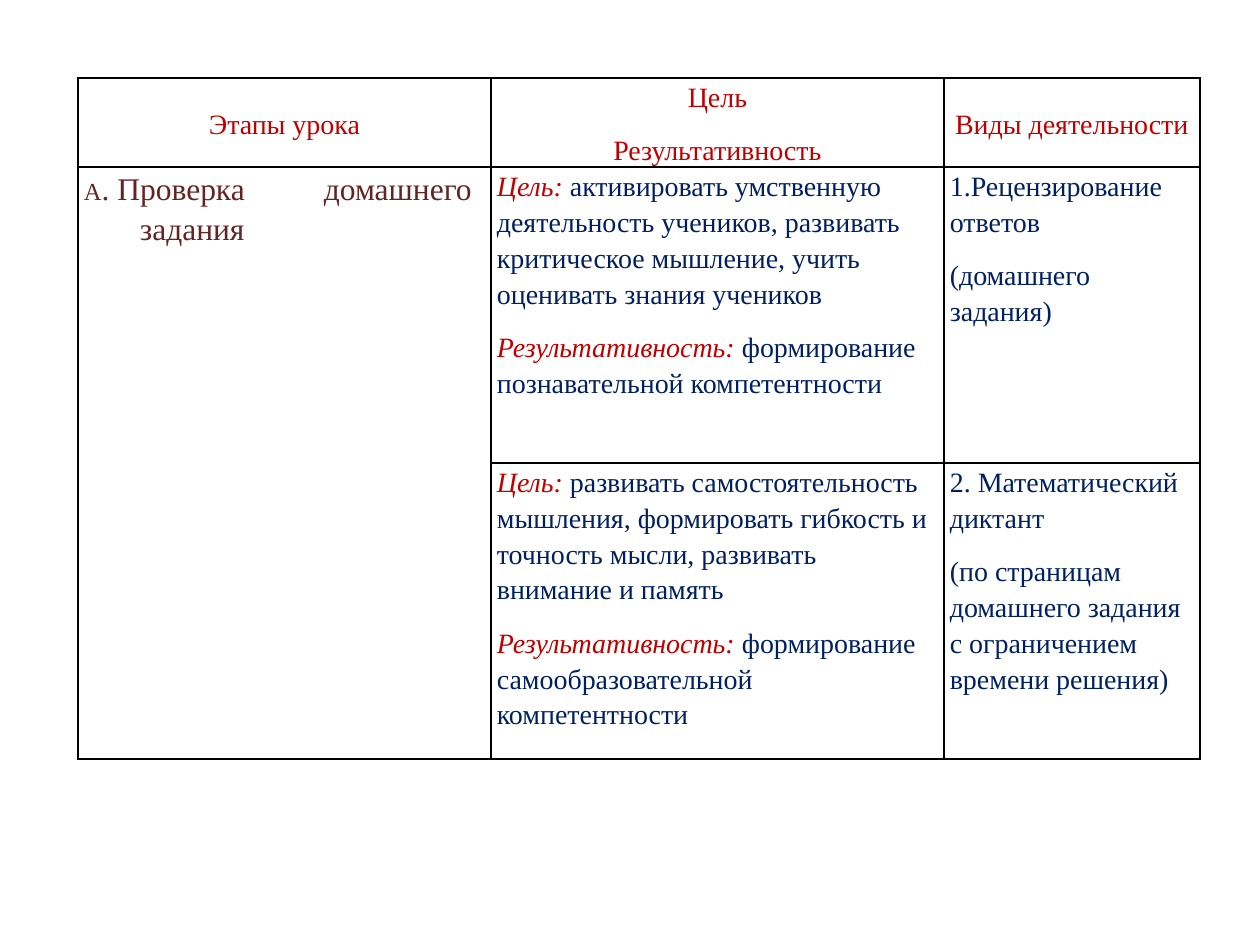
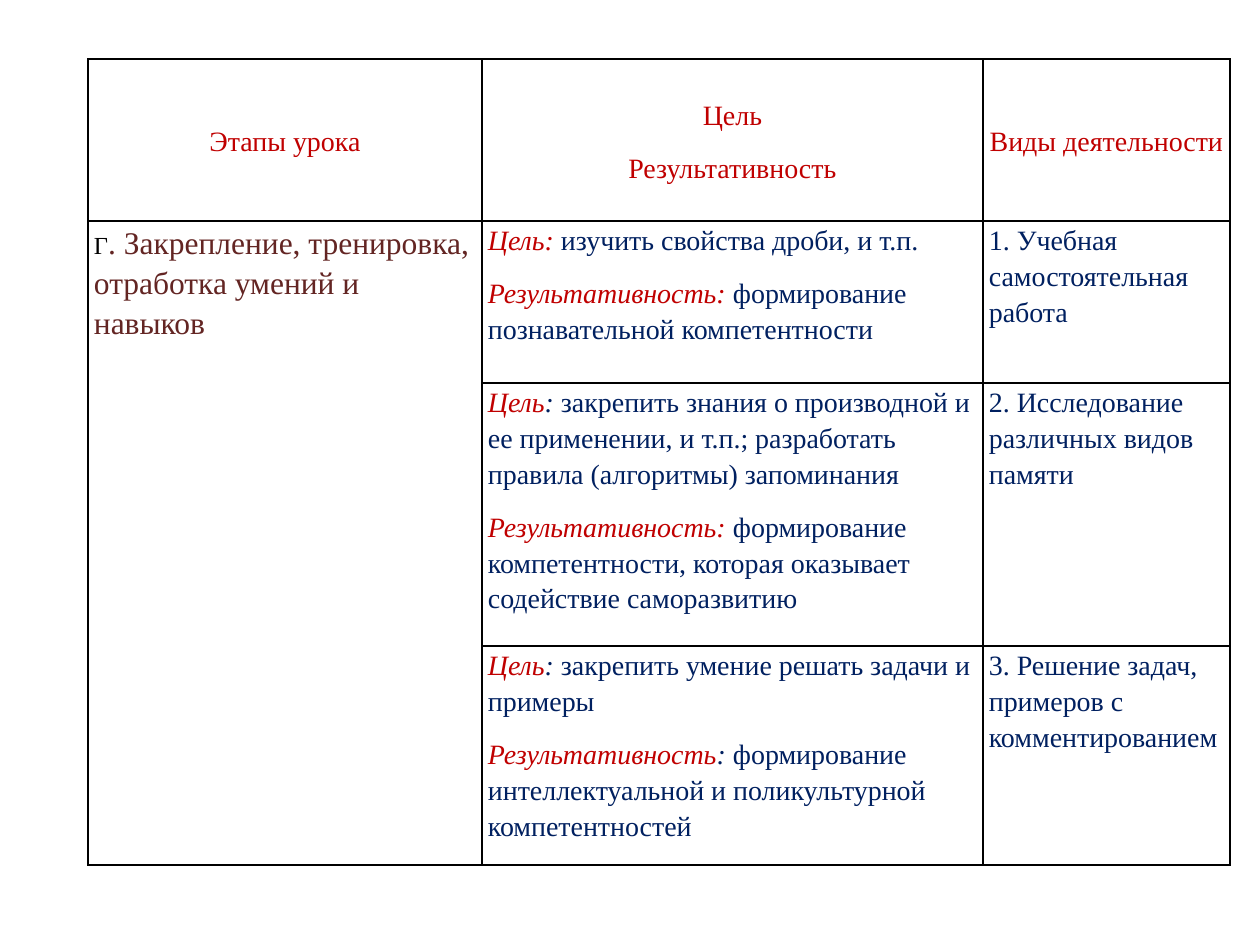
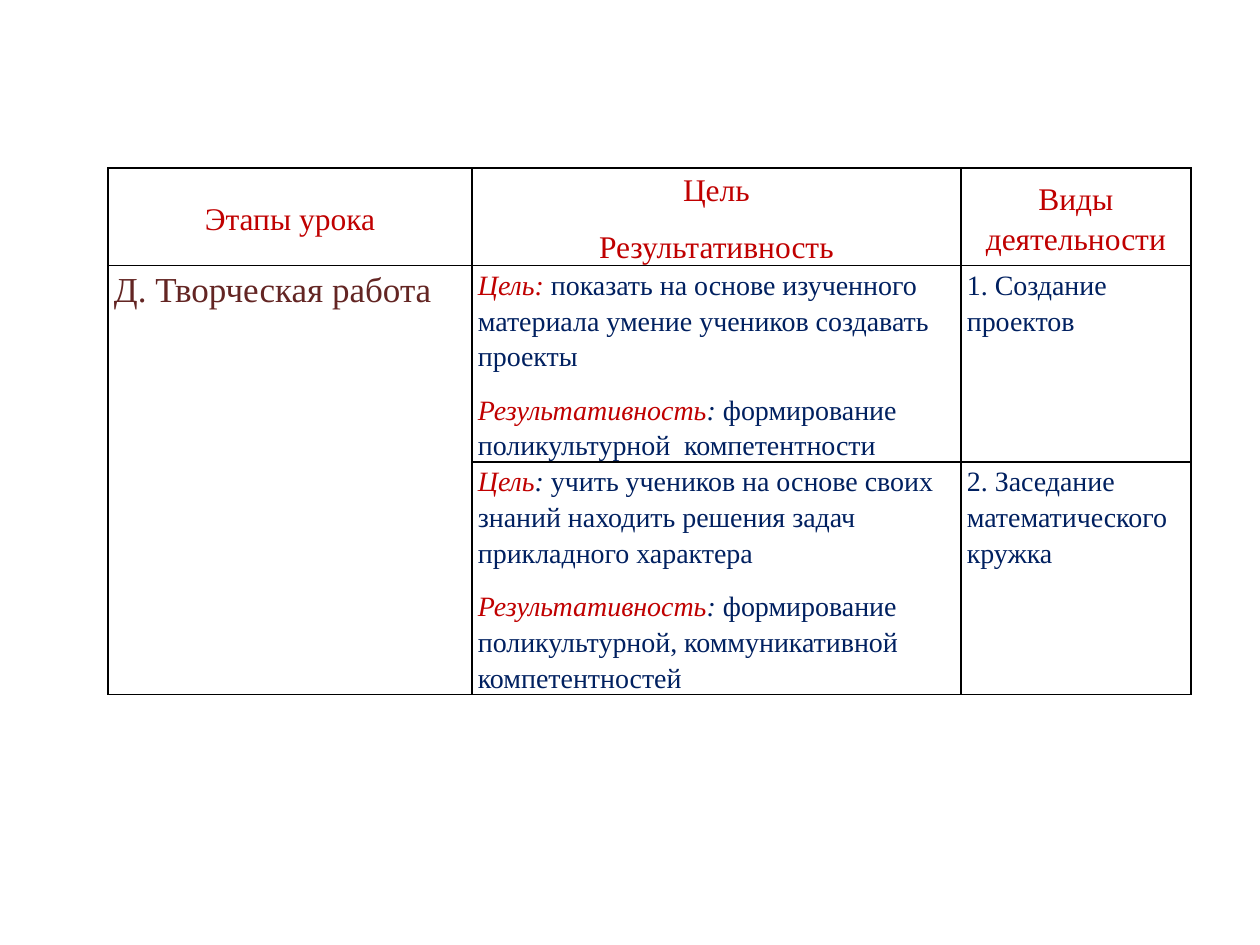
from dataclasses import dataclass
from typing import NamedTuple

import lxml.etree
import pptx
import pptx.dml.color
import pptx.enum.text
import pptx.oxml.ns
import pptx.util

PX = 914400 / 126
FONT = "Times New Roman"
COLORS = {"label": "C00000", "body": "002060", "stage": "632523", "line": "000000"}
HEADINGS = ["Этапы урока", "Цель\nРезультативность", "Виды деятельности"]


class Span(NamedTuple):
    text: str
    color: str = "body"
    size: int = 16
    italic: bool = False


class Activity(NamedTuple):
    """One lesson activity: its aim, its result and its kinds."""
    aim: list[Span]
    result: list[Span]
    kinds: list[str]


@dataclass
class Lesson:
    left: int
    top: int
    columns: list[int]
    rows: list[int]
    stage: list[Span]
    activities: list[Activity]
    heading_size: int = 16
    stage_tabs: tuple[int, ...] = ()


def emu(px: float) -> int:
    return round(px * PX)


def labelled(label: str, text: str, colon: str = "label") -> list[Span]:
    """A red italic label, its colon and the plain text after it."""
    return [Span(label, "label", italic=True), Span(": ", colon, italic=True), Span(text)]


def aim(text: str, colon: str = "label") -> list[Span]:
    return labelled("Цель", text, colon)


def result(text: str, colon: str = "label") -> list[Span]:
    return labelled("Результативность", text, colon)


def style_run(run, span: Span) -> None:
    run.font.name = FONT
    run.font.size = pptx.util.Pt(span.size)
    run.font.italic = span.italic
    run.font.bold = False
    run.font.color.rgb = pptx.dml.color.RGBColor.from_string(COLORS[span.color])


def write_cell(cell, paragraphs: list[list[Span]], centred: bool = False) -> None:
    frame = cell.text_frame
    for index, spans in enumerate(paragraphs):
        paragraph = frame.paragraphs[0] if index == 0 else frame.add_paragraph()
        paragraph.line_spacing = 1.15
        paragraph.space_after = pptx.util.Pt(10)
        if centred:
            paragraph.alignment = pptx.enum.text.PP_ALIGN.CENTER
        for span in spans:
            for line, text in enumerate(span.text.split("\v")):
                if line:
                    paragraph.add_line_break()
                run = paragraph.add_run()
                run.text = text
                style_run(run, span)
    if centred:
        cell.vertical_anchor = pptx.enum.text.MSO_ANCHOR.MIDDLE


def set_tabs(paragraph, stops: tuple[int, ...]) -> None:
    tabs = lxml.etree.SubElement(paragraph._p.get_or_add_pPr(), pptx.oxml.ns.qn("a:tabLst"))
    for stop in stops:
        lxml.etree.SubElement(tabs, pptx.oxml.ns.qn("a:tab"), pos=str(emu(stop)), algn="l")


def frame_cell(cell) -> None:
    """Thin black borders, narrow side margins and no fill."""
    cell.margin_left = cell.margin_right = emu(6)
    cell.margin_top = cell.margin_bottom = 0
    properties = cell._tc.get_or_add_tcPr()
    for side in ("a:lnL", "a:lnR", "a:lnT", "a:lnB"):
        border = lxml.etree.SubElement(
            properties, pptx.oxml.ns.qn(side), w=str(pptx.util.Pt(1)))
        fill = lxml.etree.SubElement(border, pptx.oxml.ns.qn("a:solidFill"))
        lxml.etree.SubElement(fill, pptx.oxml.ns.qn("a:srgbClr"), val=COLORS["line"])
    cell.fill.background()


def draw_lesson(deck, lesson: Lesson) -> None:
    slide = deck.slides.add_slide(deck.slide_layouts[6])
    plan = slide.shapes.add_table(
        len(lesson.rows), len(lesson.columns), emu(lesson.left), emu(lesson.top),
        emu(sum(lesson.columns)), emu(sum(lesson.rows))).table
    plan.first_row = plan.horz_banding = False
    for column, width in zip(plan.columns, lesson.columns):
        column.width = emu(width)
    for row, height in zip(plan.rows, lesson.rows):
        row.height = emu(height)
    for cell in plan.iter_cells():
        frame_cell(cell)

    # Headings
    for column, heading in enumerate(HEADINGS):
        lines = [[Span(line, "label", lesson.heading_size)] for line in heading.split("\n")]
        write_cell(plan.cell(0, column), lines, centred=True)

    # Lesson stage, one cell beside all its activities
    stage = plan.cell(1, 0)
    stage.merge(plan.cell(len(lesson.rows) - 1, 0))
    write_cell(stage, [lesson.stage])
    if lesson.stage_tabs:
        set_tabs(stage.text_frame.paragraphs[0], lesson.stage_tabs)

    # Activities
    for row, activity in enumerate(lesson.activities, start=1):
        write_cell(plan.cell(row, 1), [activity.aim, activity.result])
        write_cell(plan.cell(row, 2), [[Span(kind)] for kind in activity.kinds])


LESSONS = [
    Lesson(
        78, 78, [413, 453, 256], [89, 296, 296],
        [Span("А", "stage", 14), Span(". Проверка\tдомашнего\v\tзадания", "stage", 18)],
        [
            Activity(
                aim("активировать умственную деятельность учеников, развивать "
                    "критическое мышление, учить оценивать знания учеников"),
                result("формирование познавательной компетентности"),
                ["1.Рецензирование ответов", "(домашнего задания)"]),
            Activity(
                aim("развивать самостоятельность мышления, формировать гибкость и "
                    "точность мысли, развивать внимание и память"),
                result("формирование самообразовательной компетентности"),
                ["2. Математический диктант",
                 "(по страницам домашнего задания с ограничением времени решения)"]),
        ],
        stage_tabs=(56, 240)),
    Lesson(
        88, 59, [394, 501, 247], [162, 162, 263, 219],
        [Span("Г", "line", 14),
         Span(". Закрепление, тренировка, отработка умений и навыков", "stage", 18)],
        [
            Activity(
                aim("изучить свойства дроби, и т.п."),
                result("формирование познавательной компетентности"),
                ["1. Учебная самостоятельная работа"]),
            Activity(
                aim("закрепить знания о производной и ее применении, и т.п.; "
                    "разработать правила (алгоритмы) запоминания", "body"),
                result("формирование компетентности, которая оказывает содействие "
                       "саморазвитию"),
                ["2. Исследование различных видов памяти"]),
            Activity(
                aim("закрепить умение решать задачи и примеры", "body"),
                result("формирование интеллектуальной и поликультурной "
                       "компетентностей", "body"),
                ["3. Решение задач, примеров с комментированием"]),
        ]),
    Lesson(
        108, 168, [364, 489, 230], [97, 196, 232],
        [Span("Д. Творческая работа", "stage", 20)],
        [
            Activity(
                aim("показать на основе изученного материала умение учеников "
                    "создавать проекты"),
                result("формирование поликультурной  компетентности", "body"),
                ["1. Создание проектов"]),
            Activity(
                aim("учить учеников на основе своих знаний находить решения задач "
                    "прикладного характера", "body"),
                result("формирование поликультурной, коммуникативной "
                       "компетентностей", "body"),
                ["2. Заседание математического кружка"]),
        ],
        heading_size=18),
]


def main() -> None:
    deck = pptx.Presentation()
    deck.slide_width, deck.slide_height = emu(1260), emu(945)
    for lesson in LESSONS:
        draw_lesson(deck, lesson)
    deck.save("out.pptx")


if __name__ == "__main__":
    main()
